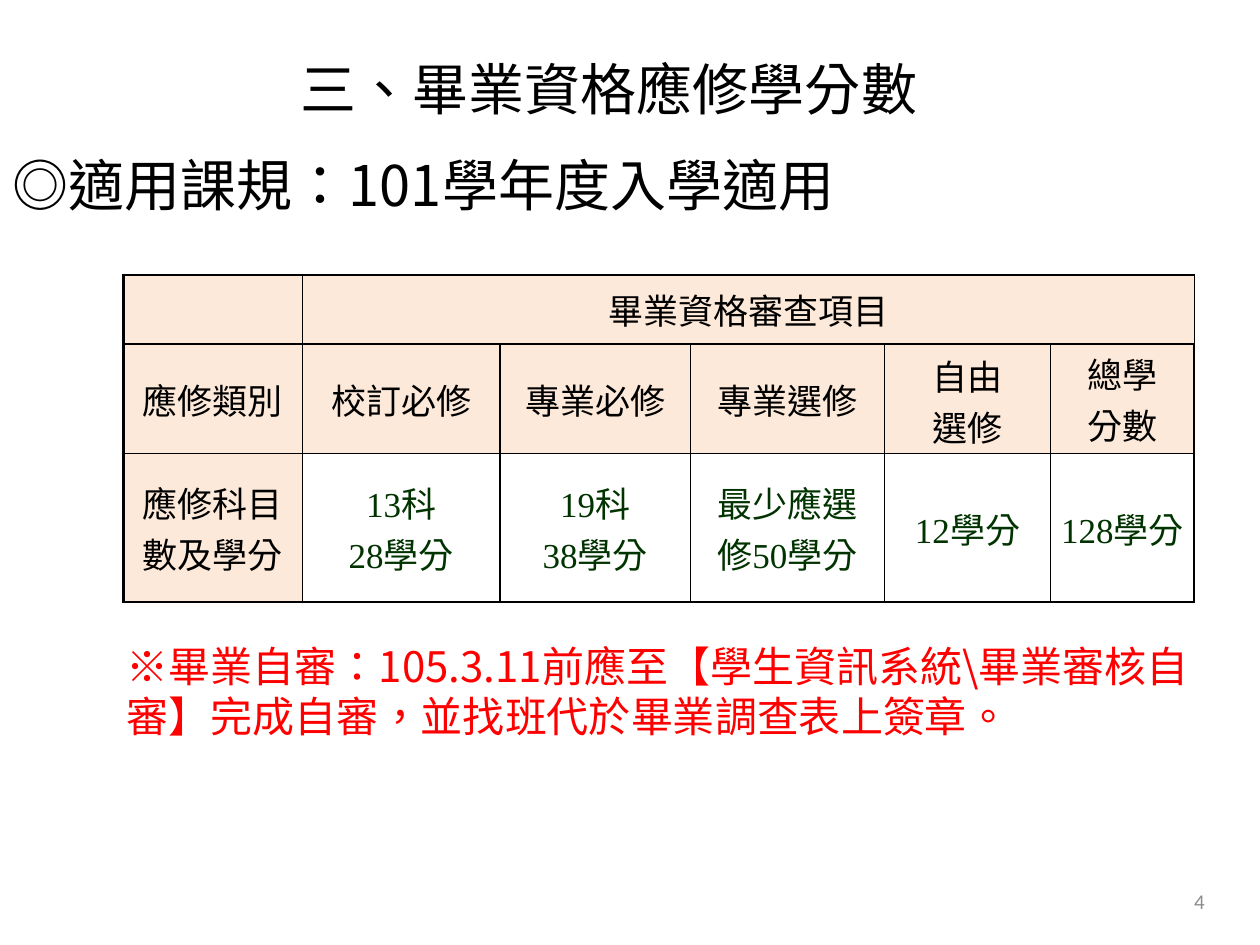
from dataclasses import dataclass

from lxml.etree import SubElement
from pptx import Presentation
from pptx.dml.color import RGBColor
from pptx.enum.text import MSO_ANCHOR as Anchor, PP_ALIGN as Align
from pptx.oxml.ns import qn
from pptx.util import Inches, Pt


@dataclass(frozen=True)
class Theme:
    """Colours, fonts and type sizes of the slide."""
    black: str = "000000"
    red: str = "FF0000"
    green: str = "003300"
    gray: str = "8C8C8C"
    peach: str = "FDE9D9"
    white: str = "FFFFFF"
    sans: str = "Noto Sans CJK SC"
    symbol: str = "Noto Sans CJK JP"
    serif: str = "Times New Roman"
    number: str = "Calibri"
    title_size: int = 32
    note_size: int = 24
    table_size: int = 20
    number_size: int = 12


THEME = Theme()
COLUMN_WIDTHS = (1.42, 1.57, 1.51, 1.54, 1.32, 1.14)
ROW_HEIGHTS = (0.55, 0.87, 1.18)
CREDIT_ROWS = (
    ("", "畢業資格審查項目", "", "", "", ""),
    ("應修類別", "校訂必修", "專業必修", "專業選修", "自由\n選修", "總學\n分數"),
    ("應修科目數及學分", "13科\n28學分", "19科\n38學分", "最少應選修50學分",
     "12學分", "128學分"),
)


def add_run(paragraph, text, size, font, color, asian_font=THEME.sans):
    """Add one run with its Latin and East Asian fonts."""
    run = paragraph.add_run()
    run.text = text
    run.font.size = Pt(size)
    run.font.name = font
    run.font.color.rgb = RGBColor.from_string(color)
    properties = run._r.get_or_add_rPr()
    properties.set("lang", "zh-TW")
    SubElement(properties, qn("a:ea"), typeface=asian_font)


def add_text_box(slide, left, top, width, height):
    """Add a wrapping, vertically centred text box and return its frame."""
    frame = slide.shapes.add_textbox(
        Inches(left), Inches(top), Inches(width), Inches(height)).text_frame
    frame.word_wrap = True
    frame.vertical_anchor = Anchor.MIDDLE
    return frame


def add_title(slide):
    """Add the centred heading and the left-aligned rule line below it."""
    frame = add_text_box(slide, 0, 0.53, 9.67, 1.64)
    frame.margin_bottom = Inches(0.82)
    heading, rule = frame.paragraphs[0], frame.add_paragraph()
    heading.alignment, rule.alignment = Align.CENTER, Align.LEFT
    heading.line_spacing = rule.line_spacing = Pt(55)
    size, color = THEME.title_size, THEME.black
    add_run(heading, "三、畢業資格應修學分數", size, THEME.symbol, color, THEME.symbol)
    add_run(rule, "◎", size, THEME.symbol, color, THEME.symbol)
    add_run(rule, "適用課規：101學年度入學適用", size, THEME.sans, color)


def set_borders(cell, widths):
    """Draw black cell borders in left, right, top, bottom order."""
    properties = cell._tc.get_or_add_tcPr()
    for index, (side, width) in enumerate(zip("LRTB", widths)):
        line = properties.makeelement(qn(f"a:ln{side}"), {"w": str(Pt(width))})
        fill = SubElement(line, qn("a:solidFill"))
        SubElement(fill, qn("a:srgbClr"), val=THEME.black)
        properties.insert(index, line)


def fill_cell(cell, text, row, column):
    """Fill one credit cell with its colours, borders and lines of text."""
    last = len(COLUMN_WIDTHS) - 1
    is_header = row < 2 or column == 0
    cell.fill.solid()
    cell.fill.fore_color.rgb = RGBColor.from_string(
        THEME.peach if is_header else THEME.white)
    set_borders(cell, (1.5 if column == 0 else 1, 1.5 if column == last else 1,
                       1.5 if row == 0 else 1, 1))
    cell.vertical_anchor = Anchor.MIDDLE
    if column == last:
        cell.margin_left = cell.margin_right = 0
        cell.margin_top = cell.margin_bottom = 0
    color = THEME.black if is_header else THEME.green
    for index, line in enumerate(text.split("\n")):
        frame = cell.text_frame
        paragraph = frame.add_paragraph() if index else frame.paragraphs[0]
        paragraph.alignment = Align.CENTER
        if line:
            add_run(paragraph, line, THEME.table_size, THEME.serif, color)


def add_credit_table(slide):
    """Add the table of required credits."""
    table = slide.shapes.add_table(
        len(ROW_HEIGHTS), len(COLUMN_WIDTHS), Inches(0.98), Inches(2.18),
        Inches(sum(COLUMN_WIDTHS)), Inches(sum(ROW_HEIGHTS))).table
    table.first_row = table.horz_banding = False
    for column, width in zip(table.columns, COLUMN_WIDTHS):
        column.width = Inches(width)
    for row, height in zip(table.rows, ROW_HEIGHTS):
        row.height = Inches(height)
    for row, texts in enumerate(CREDIT_ROWS):
        for column, text in enumerate(texts):
            fill_cell(table.cell(row, column), text, row, column)
    table.cell(0, 1).merge(table.cell(0, len(COLUMN_WIDTHS) - 1))


def add_note(slide):
    """Add the red reminder below the table."""
    paragraph = add_text_box(slide, 0.91, 5.01, 8.66, 0.94).paragraphs[0]
    add_run(paragraph,
            "※畢業自審：105.3.11前應至【學生資訊系統\\畢業審核自審】完成自審，並找班代於畢業調查表上簽章。",
            THEME.note_size, THEME.sans, THEME.red)


def add_slide_number(slide):
    """Add the page number at the lower right."""
    paragraph = add_text_box(slide, 7.33, 6.95, 2.33, 0.4).paragraphs[0]
    paragraph.alignment = Align.RIGHT
    add_run(paragraph, "4", THEME.number_size, THEME.number, THEME.gray)


def main():
    """Build and save the graduation credits slide."""
    presentation = Presentation()
    presentation.slide_width = Inches(10)
    presentation.slide_height = Inches(7.5)
    slide = presentation.slides.add_slide(presentation.slide_layouts[6])
    add_title(slide)
    add_note(slide)
    add_credit_table(slide)
    add_slide_number(slide)
    presentation.save("out.pptx")


if __name__ == "__main__":
    main()
